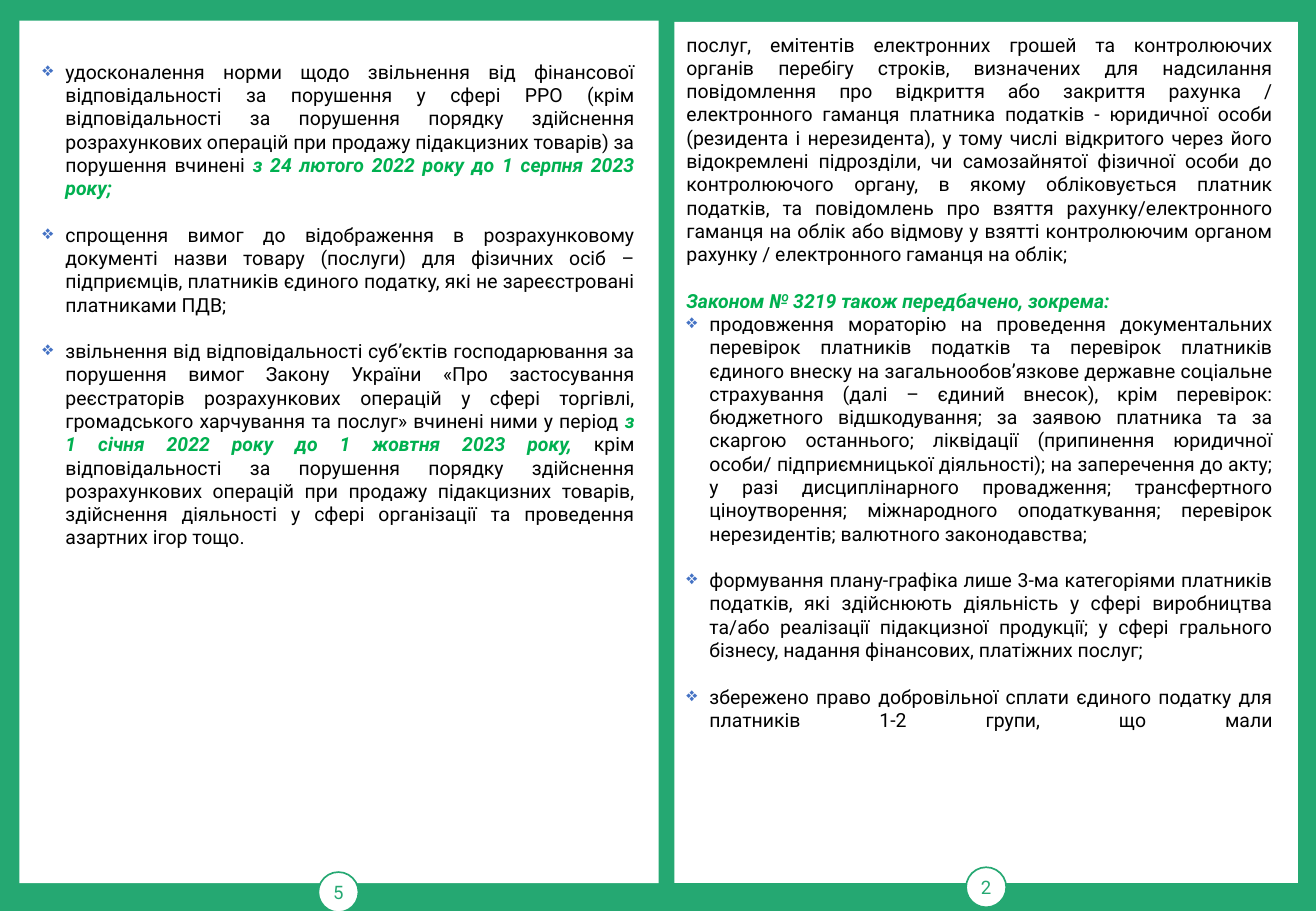
import pptx
import pptx.dml.color
import pptx.enum.shapes
import pptx.enum.text
import pptx.util
from lxml import etree

WIDTH, HEIGHT = pptx.util.Inches(10.83), pptx.util.Inches(7.5)
COLOURS = {"green": "25A872", "sheet": "FFFFFF", "text": "000000",
           "accent": "00B050", "bullet": "4472C4"}
FONT = "Roboto"
TEXT_SIZE, NUMBER_SIZE, LINE_GAP = 11.5, 11, 13.8
INDENT = pptx.util.Inches(0.19)
SHAPES = pptx.enum.shapes.MSO_SHAPE
ANCHORS = pptx.enum.text.MSO_ANCHOR
ALIGN = pptx.enum.text.PP_ALIGN

# Paragraphs are (text, bulleted, gap before); *asterisks* enclose accented words.
LEFT_TEXT = [
    ("удосконалення норми щодо звільнення від фінансової відповідальності за порушення "
     "у сфері РРО (крім відповідальності за порушення порядку здійснення розрахункових "
     "операцій при продажу підакцизних товарів) за порушення вчинені "
     "*з 24 лютого 2022 року до 1 серпня 2023 року;*", True, False),
    ("спрощення вимог до відображення в розрахунковому документі назви товару (послуги) "
     "для фізичних осіб – підприємців, платників єдиного податку, які не зареєстровані "
     "платниками ПДВ;", True, True),
    ("звільнення від відповідальності суб’єктів господарювання за порушення вимог Закону "
     "України «Про застосування реєстраторів розрахункових операцій у сфері торгівлі, "
     "громадського харчування та послуг» вчинені ними у період "
     "*з 1 січня 2022 року до 1 жовтня 2023 року, *крім відповідальності за порушення "
     "порядку здійснення розрахункових операцій при продажу підакцизних товарів, "
     "здійснення діяльності у сфері організації та проведення азартних ігор тощо.",
     True, True),
]
RIGHT_TEXT = [
    ("послуг, емітентів електронних грошей та контролюючих органів перебігу строків, "
     "визначених для надсилання повідомлення про відкриття або закриття рахунка / "
     "електронного гаманця платника податків - юридичної особи (резидента і нерезидента), "
     "у тому числі відкритого через його відокремлені підрозділи, чи самозайнятої "
     "фізичної особи до контролюючого органу, в якому обліковується платник податків, "
     "та повідомлень про взяття рахунку/електронного гаманця на облік або відмову у взятті "
     "контролюючим органом рахунку / електронного гаманця на облік;", False, False),
    ("*Законом № 3219 також передбачено, зокрема:*", False, True),
    ("продовження мораторію на проведення документальних перевірок платників податків та "
     "перевірок платників єдиного внеску на загальнообов’язкове державне соціальне "
     "страхування (далі – єдиний внесок), крім перевірок: бюджетного відшкодування; "
     "за заявою платника та за скаргою останнього; ліквідації (припинення юридичної "
     "особи/ підприємницької діяльності); на заперечення до акту; у разі дисциплінарного "
     "провадження; трансфертного ціноутворення; міжнародного оподаткування; перевірок "
     "нерезидентів; валютного законодавства;", True, False),
    ("формування плану-графіка лише 3-ма категоріями платників податків, які здійснюють "
     "діяльність у сфері виробництва та/або реалізації підакцизної продукції; у сфері "
     "грального бізнесу, надання фінансових, платіжних послуг;", True, True),
    ("збережено право добровільної сплати єдиного податку для платників 1-2 групи, що мали\n",
     True, True),
]


def colour(name):
    return pptx.dml.color.RGBColor.from_string(COLOURS[name])


def place(left, top, width, height):
    """Turn percentages of the slide into lengths."""
    return [int(share * side / 100) for share, side in
            zip((left, top, width, height), (WIDTH, HEIGHT) * 2)]


def add_white_shape(page, kind, area):
    shape = page.shapes.add_shape(kind, *place(*area))
    shape.shadow.inherit = False
    shape.fill.solid()
    shape.fill.fore_color.rgb = colour("sheet")
    shape.line.fill.background()
    return shape


def add_page_number(page, number, left, top):
    circle = add_white_shape(page, SHAPES.OVAL, (left, top, 3.05, 4.4))
    circle.line.color.rgb = colour("green")
    circle.line.width = pptx.util.Pt(1)
    frame = circle.text_frame
    frame.margin_left = frame.margin_right = frame.margin_top = frame.margin_bottom = 0
    frame.vertical_anchor = ANCHORS.MIDDLE
    para = frame.paragraphs[0]
    para.text = number
    para.alignment = ALIGN.CENTER
    para.font.name = FONT
    para.font.size = pptx.util.Pt(NUMBER_SIZE)
    para.font.color.rgb = colour("green")


def add_bullet(para):
    properties = para._p.get_or_add_pPr()
    properties.set("marL", str(INDENT))
    properties.set("indent", str(-INDENT))
    tag = "{http://schemas.openxmlformats.org/drawingml/2006/main}"
    bullet_colour = etree.SubElement(properties, tag + "buClr")
    etree.SubElement(bullet_colour, tag + "srgbClr", val=COLOURS["bullet"])
    etree.SubElement(properties, tag + "buChar", char="❖")


def fill_paragraph(para, text, bulleted, gap):
    para.alignment = ALIGN.JUSTIFY
    if gap:
        para.space_before = pptx.util.Pt(LINE_GAP)
    if bulleted:
        add_bullet(para)
    para.font.name = FONT
    para.font.size = pptx.util.Pt(TEXT_SIZE)
    para.font.color.rgb = colour("text")
    for index, words in enumerate(text.rstrip("\n").split("*")):
        if not words:
            continue
        span = para.add_run()
        span.text = words
        if index % 2:
            span.font.bold = span.font.italic = True
            span.font.color.rgb = colour("accent")
    if text.endswith("\n"):
        para.add_line_break()


def add_text(page, area, paragraphs, anchor):
    frame = page.shapes.add_textbox(*place(*area)).text_frame
    frame.word_wrap = True
    frame.vertical_anchor = anchor
    for index, content in enumerate(paragraphs):
        para = frame.add_paragraph() if index else frame.paragraphs[0]
        fill_paragraph(para, *content)


def main():
    deck = pptx.Presentation()
    deck.slide_width, deck.slide_height = WIDTH, HEIGHT
    page = deck.slides.add_slide(deck.slide_layouts[6])
    page.background.fill.solid()
    page.background.fill.fore_color.rgb = colour("green")

    add_white_shape(page, SHAPES.RECTANGLE, (1.48, 2.27, 48.57, 94.67))
    add_page_number(page, "5", 24.19, 95.73)
    add_white_shape(page, SHAPES.RECTANGLE, (51.25, 2.4, 47.37, 94.53))
    add_page_number(page, "2", 73.41, 95.2)
    add_text(page, (2.31, 3.07, 46.81, 60.67), LEFT_TEXT, ANCHORS.MIDDLE)
    add_text(page, (51.25, 2.93, 46.35, 96.8), RIGHT_TEXT, ANCHORS.TOP)
    deck.save("out.pptx")


if __name__ == "__main__":
    main()
